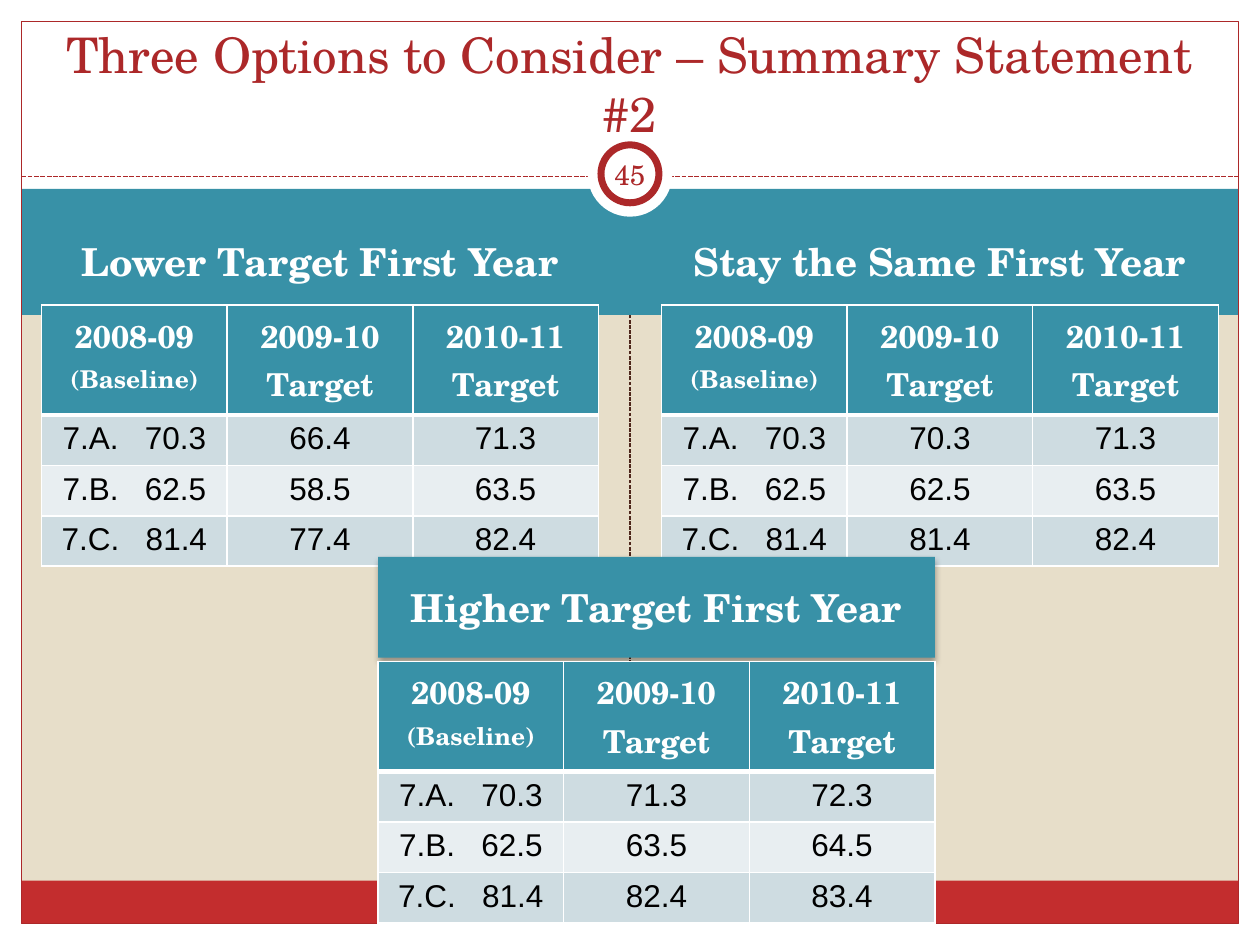
from lxml.etree import SubElement
from pptx import Presentation
from pptx.dml.color import RGBColor
from pptx.enum.dml import MSO_LINE
from pptx.enum.shapes import MSO_CONNECTOR, MSO_SHAPE
from pptx.enum.text import MSO_ANCHOR, PP_ALIGN
from pptx.oxml import parse_xml
from pptx.oxml.ns import nsdecls, qn
from pptx.util import Emu, Inches, Pt

SERIF = "TeX Gyre Schola"
TEAL, RED, WHITE = "3891A7", "AC2829", "FFFFFF"
WIDTH, HEAD = 4.42, 0.8
HEADS = ["2008-09\n(Baseline)", "2009-10\nTarget", "2010-11\nTarget"]
BASE = ["7.A. 70.3", "7.B. 62.5", "7.C. 81.4"]
LOWER = [["66.4", "71.3"], ["58.5", "63.5"], ["77.4", "82.4"]]
SAME = [["70.3", "71.3"], ["62.5", "63.5"], ["81.4", "82.4"]]
HIGHER = [["71.3", "72.3"], ["63.5", "64.5"], ["82.4", "83.4"]]


def color(code):
    """Turn a hex string into a colour."""
    return RGBColor.from_string(code)


def style(frame, size, code, font=SERIF, bold=False):
    """Centre the text of a frame and format its runs."""
    frame.word_wrap = True
    frame.vertical_anchor = MSO_ANCHOR.MIDDLE
    for para in frame.paragraphs:
        para.alignment = PP_ALIGN.CENTER
        for run in para.runs:
            run.font.size, run.font.name, run.font.bold = Pt(size), font, bold
            run.font.color.rgb = color(code)


def place(shape, box):
    """Move a shape to a box, in front of what is there."""
    shape.left, shape.top, shape.width, shape.height = map(Inches, box)
    tree = shape._element.getparent()
    tree.append(shape._element)


def block(slide, box, fill=None, line=None, weight=0.75, kind=MSO_SHAPE.RECTANGLE):
    """Add a plain shape with an optional fill and outline."""
    shape = slide.shapes.add_shape(kind, *map(Inches, box))
    shape.shadow.inherit = False
    if fill:
        shape.fill.solid()
        shape.fill.fore_color.rgb = color(fill)
    else:
        shape.fill.background()
    if line:
        shape.line.color.rgb = color(line)
        shape.line.width = Pt(weight)
    else:
        shape.line.fill.background()
    return shape


def dash(slide, start, end, code, weight):
    """Add a dashed line between two points."""
    line = slide.shapes.add_connector(MSO_CONNECTOR.STRAIGHT, *map(Inches, start + end))
    line.line.color.rgb = color(code)
    line.line.width = Pt(weight)
    line.line.dash_style = MSO_LINE.SQUARE_DOT
    SubElement(line._element.spPr, qn("a:effectLst"))


def frame(slide, box):
    """Draw the bands, margins and rules of the page."""
    left, top, wide, high = box
    right, base = left + wide, top + high
    mid = left + wide / 2
    dash(slide, (mid, 6.99), (mid, 2.41), "4F271C", 0.75)
    for side in [(0, 0, 10, 1.58), (0, base, 10, top), (0, 0, left, 7.5), (right, 0, left, 7.5)]:
        block(slide, side, WHITE)
    block(slide, (left, 1.5, wide, 1), TEAL)
    block(slide, (left, base - 0.34, wide, 0.34), "C32D2E")
    dash(slide, (left, 1.4), (right, 1.4), RED, 0.9)
    block(slide, box, line=RED)


def badge(slide, mid, top, size):
    """Draw the ringed page number."""
    block(slide, (mid - size / 2, top, size, size), WHITE, kind=MSO_SHAPE.OVAL)
    ring = size - 0.21
    block(slide, (mid - ring / 2, top + 0.1, ring, ring), WHITE, RED, 4, MSO_SHAPE.OVAL)
    note = slide.shapes.add_textbox(*map(Inches, (mid - 0.25, top + 0.09, 0.5, 0.48)))
    text = note.text_frame
    text.margin_left = text.margin_right = text.margin_top = text.margin_bottom = Inches(0.05)
    text.text = "45"
    style(text, 16, RED)


def border(cell, head):
    """Give a cell white edges, with a thick one below a heading."""
    props = cell._tc.get_or_add_tcPr()
    for spot, side in enumerate("LRTB"):
        weight = Pt(3 if head and side == "B" else 1)
        props.insert(spot, parse_xml(
            f'<a:ln{side} {nsdecls("a")} w="{weight}"><a:solidFill>'
            f'<a:srgbClr val="{WHITE}"/></a:solidFill></a:ln{side}>'))


def label(para, text):
    """Write a label and its value with a widened space between."""
    name, value = text.split()
    para.text = name
    gap = para.add_run()
    gap.text = " "
    gap._r.get_or_add_rPr().set("spc", "1000")
    para.add_run().text = value


def grid(slide, left, top, values):
    """Add the table of one option."""
    rows = [HEADS] + [[base] + row for base, row in zip(BASE, values)]
    box = map(Inches, (left, top, WIDTH, 2.07))
    table = slide.shapes.add_table(len(rows), len(HEADS), *box).table
    for col in table.columns:
        col.width = Emu(Inches(WIDTH) // len(HEADS))
    for num, row in enumerate(rows):
        head = num == 0
        table.rows[num].height = Inches(0.87 if head else 0.4)
        for spot, text in enumerate(row):
            cell = table.cell(num, spot)
            body = cell.text_frame
            cell.fill.solid()
            cell.fill.fore_color.rgb = color(TEAL if head else "CEDCE1" if num % 2 else "E8EEF1")
            border(cell, head)
            if head:
                body.text = text
                style(body, 18, WHITE, bold=True)
                body.paragraphs[0].space_before = Pt(4)
                if spot == 0:
                    body.paragraphs[1].runs[0].font.size = Pt(14)
            else:
                if spot == 0:
                    label(body.paragraphs[0], text)
                else:
                    body.text = text
                style(body, 18, "000000", "Arial")
            cell.vertical_anchor = MSO_ANCHOR.TOP


def option(slide, left, top, drop, shape, name, values):
    """Fill the heading of an option and add its table below."""
    place(shape, (left, top, WIDTH, HEAD))
    shape.text_frame.text = name
    style(shape.text_frame, 22, WHITE, bold=True)
    shape.text_frame.paragraphs[0].space_before = Pt(4.4)
    grid(slide, left, top + drop, values)


def shade(shape):
    """Put a soft shadow below a shape."""
    effects = shape._element.spPr.find(qn("a:effectLst"))
    glow = SubElement(effects, qn("a:outerShdw"), blurRad=str(Pt(4)), dist=str(Pt(2)),
                      dir="5400000", rotWithShape="0")
    tint = SubElement(glow, qn("a:srgbClr"), val="000000")
    SubElement(tint, qn("a:alpha"), val="35000")


def main():
    """Build the slide and save it."""
    deck = Presentation()
    deck.slide_width, deck.slide_height = Inches(10), Inches(7.5)
    slide = deck.slides.add_slide(deck.slide_layouts[4])
    slide.background.fill.solid()
    slide.background.fill.fore_color.rgb = color("E7DEC9")
    title, first, spare, second, extra = slide.placeholders
    for item in (spare, extra):
        item._element.getparent().remove(item._element)
    frame(slide, (0.17, 0.17, 9.66, 7.16))
    badge(slide, 5, 1.05, 0.67)
    option(slide, 0.33, 1.67, 0.75, first, "Lower Target First Year", LOWER)
    option(slide, 5.25, 1.67, 0.75, second, "Stay the Same First Year", SAME)
    place(title, (0.33, 0.25, 9.33, 0.83))
    title.text_frame.text = "Three Options to Consider – Summary Statement #2"
    style(title.text_frame, 28, RED)
    third = block(slide, (3, 4.42, WIDTH, HEAD), TEAL)
    shade(third)
    option(slide, 3, 4.42, 0.83, third, "Higher Target First Year", HIGHER)
    deck.save("out.pptx")


if __name__ == "__main__":
    main()
